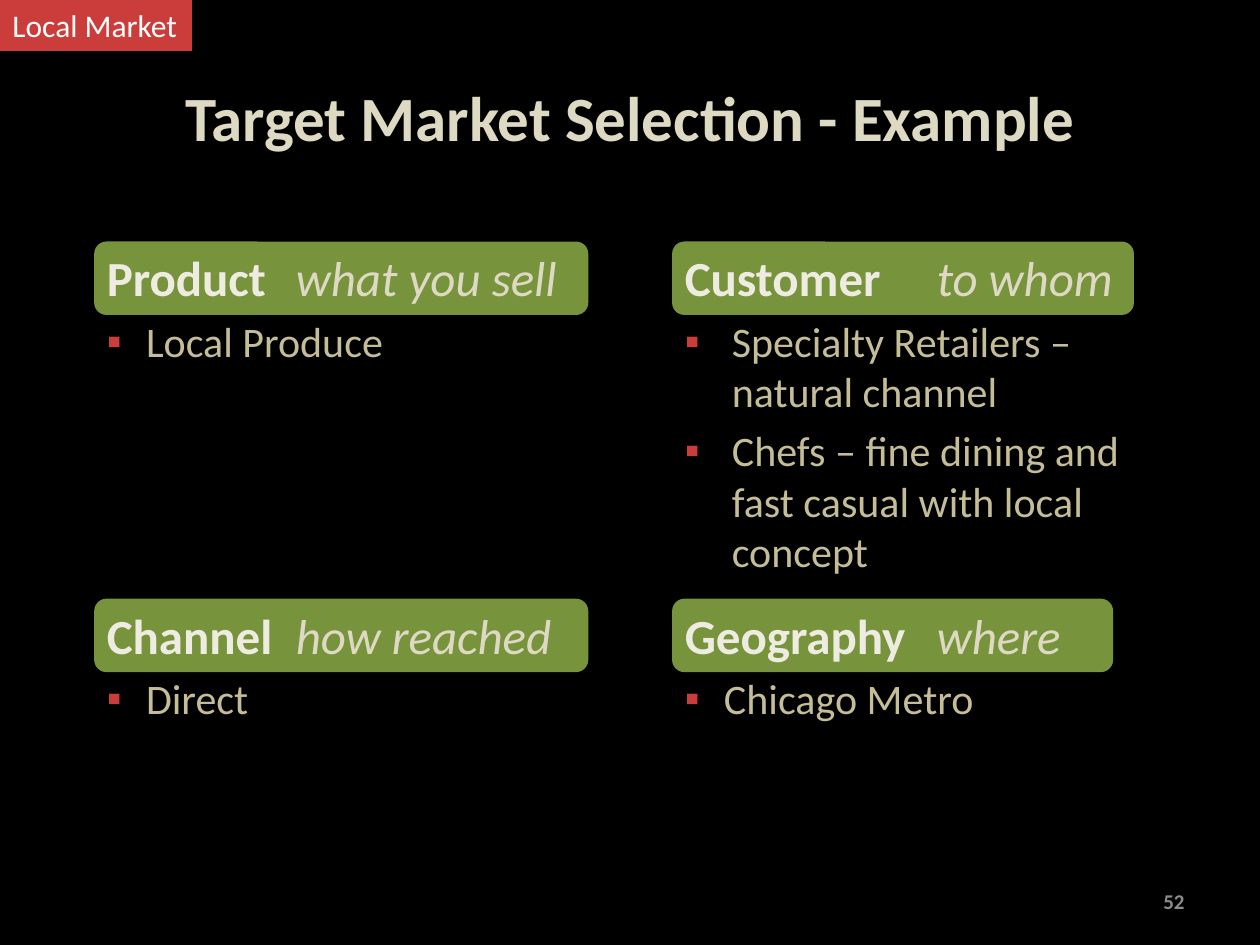
import pptx
import pptx.util
import pptx.dml.color
import pptx.enum.shapes
import pptx.enum.text
import pptx.oxml
import pptx.oxml.ns
from lxml import etree

Cm, Pt = pptx.util.Cm, pptx.util.Pt
SHAPE = pptx.enum.shapes.MSO_SHAPE
ANCHOR = pptx.enum.text.MSO_ANCHOR
ALIGN = pptx.enum.text.PP_ALIGN
FIT = pptx.enum.text.MSO_AUTO_SIZE

TITLE = "Target Market Selection - Example"
TAG = "Local Market"
NUMBER = "52"
# Lengths in cm: the question's tab stop, the bullet indent, bar width, box size.
BLOCKS = [
    dict(col=0, row=0, head="Product", ask="what you sell", tab=3.84, indent=0.79,
         bar=9.96, box=(9.96, 5.08), items=["Local Produce"]),
    dict(col=1, row=0, head="Customer", ask="to whom", tab=4.82, indent=0.95,
         bar=9.31, box=(9.31, 6.56),
         items=["Specialty Retailers – natural channel",
                "Chefs – fine dining and fast casual with local concept"]),
    dict(col=0, row=1, head="Channel", ask="how reached", tab=3.98, indent=0.79,
         bar=9.96, box=(10.16, 5.08), items=["Direct"]),
    dict(col=1, row=1, head="Geography", ask="where", tab=5.31, indent=0.79,
         bar=8.89, box=(8.89, 4.66), items=["Chicago Metro"]),
]
COLS, ROWS = (1.9, 13.55), (4.87, 12.07)
BAR_HEIGHT = 1.48
RED, GREEN, CREAM = "CB3D3A", "77933C", "DDD9C3"


def rgb(value):
    return pptx.dml.color.RGBColor.from_string(value)


def place(sp, x, y, w, h):
    sp.left, sp.top, sp.width, sp.height = Cm(x), Cm(y), Cm(w), Cm(h)


def add_text(p, text, size=24, color="C4BD97", bold=False, italic=False):
    r = p.add_run()
    r.text = text
    f = r.font
    f.name, f.size, f.bold, f.italic = "Calibri", Pt(size), bold, italic
    f.color.rgb = rgb(color)


def add_panel(s, kind, color, *box):
    sp = s.shapes.add_shape(kind, *map(Cm, box))
    sp.shadow.inherit = False
    sp.fill.solid()
    sp.fill.fore_color.rgb = rgb(color)
    sp.line.fill.background()
    return sp


def sub(parent, tag, **attrs):
    return etree.SubElement(parent, pptx.oxml.ns.qn("a:" + tag), **attrs)


def format_paragraph(p, indent=0, bullet=None, tab=None):
    """Set the hanging indent, bullet and tab stop, in schema order."""
    p.alignment = ALIGN.LEFT
    p.space_before = Pt(5 if bullet else 0)
    pPr = p._p.get_or_add_pPr()
    pPr.set("marL", str(Cm(indent)))
    pPr.set("indent", str(-Cm(indent)))
    if bullet:
        sub(sub(pPr, "buClr"), "srgbClr", val=RED)
        sub(pPr, "buChar", char=bullet)
    else:
        sub(pPr, "buNone")
    if tab:
        sub(sub(pPr, "tabLst"), "tab", pos=str(Cm(tab)), algn="l")


def fill_block(s, sp, block):
    x, y = COLS[block["col"]], ROWS[block["row"]]
    bar = add_panel(s, SHAPE.ROUNDED_RECTANGLE, GREEN, x, y, block["bar"], BAR_HEIGHT)
    sp.element.addprevious(bar.element)  # the bar lies behind its heading
    place(sp, x, y, *block["box"])
    tf = sp.text_frame
    tf.word_wrap, tf.auto_size, tf.vertical_anchor = True, FIT.NONE, ANCHOR.TOP
    p = tf.paragraphs[0]
    format_paragraph(p, tab=block["tab"])
    add_text(p, block["head"] + "\t", size=28, color="EEECE1", bold=True)
    add_text(p, block["ask"], size=28, color=CREAM, italic=True)
    for item in block["items"]:
        p = tf.add_paragraph()
        format_paragraph(p, block["indent"], bullet="▪")
        add_text(p, item)


def main():
    prs = pptx.Presentation()
    prs.slide_width, prs.slide_height = Cm(25.4), Cm(19.05)
    s = prs.slides.add_slide(prs.slide_layouts.get_by_name("Comparison"))
    s.background.fill.solid()
    s.background.fill.fore_color.rgb = rgb("000000")

    title = s.shapes.title
    place(title, 1.27, 0.76, 22.86, 3.18)
    tf = title.text_frame
    tf.auto_size, tf.vertical_anchor = FIT.NONE, ANCHOR.MIDDLE
    tf.paragraphs[0].alignment = ALIGN.CENTER
    add_text(tf.paragraphs[0], TITLE, size=36, color=CREAM, bold=True)

    bodies = [sp for sp in s.placeholders if sp.placeholder_format.idx > 0]
    for sp, block in zip(bodies, BLOCKS):
        fill_block(s, sp, block)

    number = s.shapes.add_textbox(Cm(18.2), Cm(17.66), Cm(5.93), Cm(1.01))
    tf = number.text_frame
    tf.word_wrap, tf.vertical_anchor = True, ANCHOR.MIDDLE
    tf.paragraphs[0].alignment = ALIGN.RIGHT
    add_text(tf.paragraphs[0], NUMBER, size=12, color="8C8C8C", bold=True)

    tf = add_panel(s, SHAPE.RECTANGLE, RED, 0, 0, 3.87, 1.03).text_frame
    tf.word_wrap, tf.auto_size = False, FIT.SHAPE_TO_FIT_TEXT
    tf.vertical_anchor = ANCHOR.TOP
    tf.paragraphs[0].alignment = ALIGN.LEFT
    add_text(tf.paragraphs[0], TAG, size=18, color="FFFFFF")

    prs.save("out.pptx")


if __name__ == "__main__":
    main()
